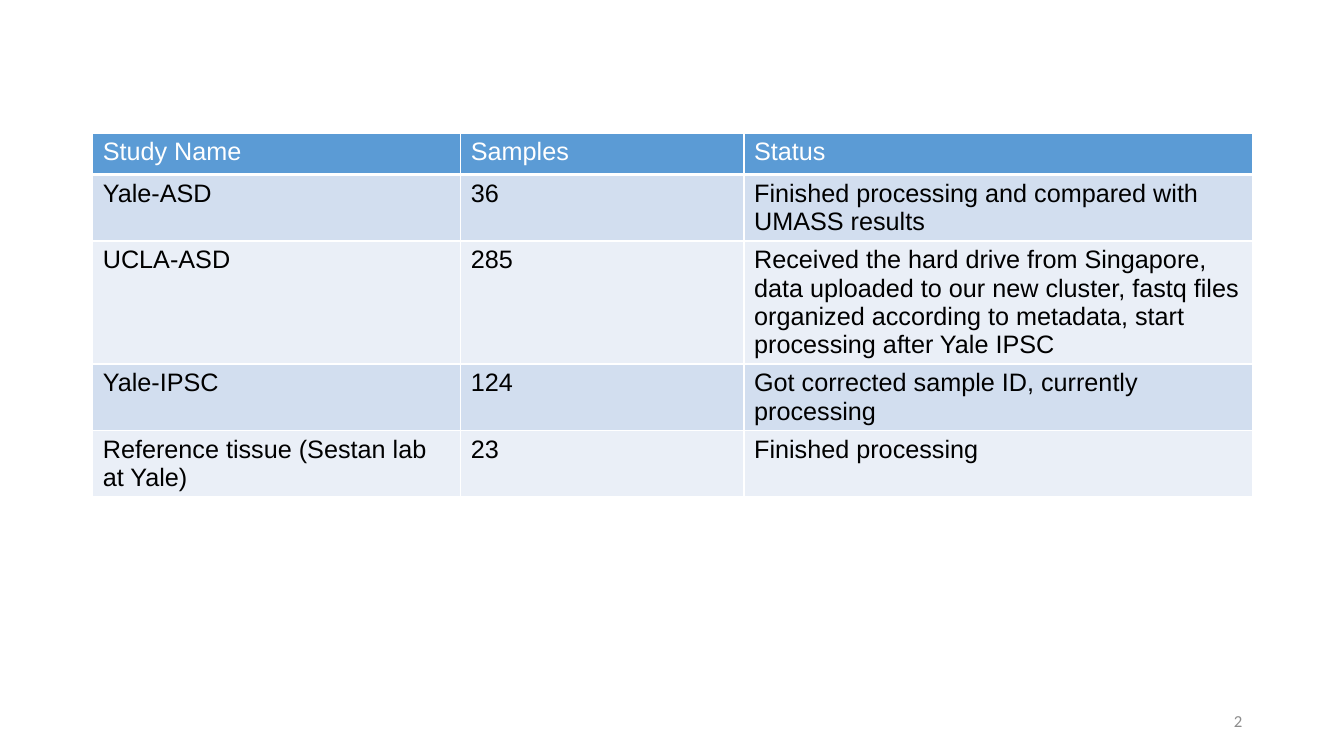
from dataclasses import dataclass

from lxml.etree import SubElement
from pptx import Presentation
from pptx.dml.color import RGBColor
from pptx.enum.text import MSO_ANCHOR, PP_ALIGN
from pptx.oxml.ns import qn
from pptx.util import Inches, Pt


@dataclass(frozen=True)
class Theme:
    header: str = "5B9BD5"
    bands: tuple = ("D2DEEF", "EAEFF7")
    white: str = "FFFFFF"
    black: str = "000000"
    grey: str = "8C8C8C"
    table_font: str = "Arial"
    number_font: str = "Calibri"
    table_size: int = 18
    number_size: int = 12


THEME = Theme()
COL_WIDTHS = (3.65, 2.81, 5.04)
ROW_HEIGHT = 0.41
STUDIES = (
    ("Study Name", "Samples", "Status"),
    ("Yale-ASD", "36", "Finished processing and compared with UMASS results"),
    ("UCLA-ASD", "285",
     "Received the hard drive from Singapore, data uploaded to our new cluster, "
     "fastq files organized according to metadata, start processing after Yale IPSC"),
    ("Yale-IPSC", "124", "Got corrected sample ID, currently processing"),
    ("Reference tissue (Sestan lab at Yale)", "23", "Finished processing"),
)


def style_text(p, font, size, color):
    for r in p.runs:
        r.font.name = font
        r.font.size = Pt(size)
        r.font.bold = False
        r.font.color.rgb = RGBColor.from_string(color)


def set_borders(cell, color, bottom):
    """Draw 1 pt borders, with the bottom one at its own width in points."""
    tc_pr = cell._tc.get_or_add_tcPr()
    for side, width in (("L", 1), ("R", 1), ("T", 1), ("B", bottom)):
        ln = SubElement(tc_pr, qn(f"a:ln{side}"), w=str(Pt(width)))
        SubElement(SubElement(ln, qn("a:solidFill")), qn("a:srgbClr"), val=color)


def add_study_table(s, left, top):
    table = s.shapes.add_table(
        len(STUDIES), len(COL_WIDTHS), Inches(left), Inches(top),
        Inches(sum(COL_WIDTHS)), Inches(ROW_HEIGHT * len(STUDIES))).table
    for column, width in zip(table.columns, COL_WIDTHS):
        column.width = Inches(width)
    for i, values in enumerate(STUDIES):
        is_header = i == 0
        fill = THEME.header if is_header else THEME.bands[(i - 1) % 2]
        color = THEME.white if is_header else THEME.black
        for cell, value in zip(table.rows[i].cells, values):
            set_borders(cell, THEME.white, bottom=3 if is_header else 1)
            cell.fill.solid()
            cell.fill.fore_color.rgb = RGBColor.from_string(fill)
            cell.text_frame.text = value
            style_text(cell.text_frame.paragraphs[0], THEME.table_font,
                       THEME.table_size, color)


def add_slide_number(s, left, top, width, height, number):
    tf = s.shapes.add_textbox(Inches(left), Inches(top),
                              Inches(width), Inches(height)).text_frame
    tf.word_wrap = True
    tf.vertical_anchor = MSO_ANCHOR.MIDDLE
    tf.text = str(number)
    p = tf.paragraphs[0]
    p.alignment = PP_ALIGN.RIGHT
    style_text(p, THEME.number_font, THEME.number_size, THEME.grey)


def main():
    prs = Presentation()
    prs.slide_width, prs.slide_height = Inches(13.33), Inches(7.5)
    s = prs.slides.add_slide(prs.slide_layouts[6])
    add_study_table(s, 0.92, 1.32)
    add_slide_number(s, 9.42, 6.95, 3, 0.4, 2)
    prs.save("out.pptx")


if __name__ == "__main__":
    main()
